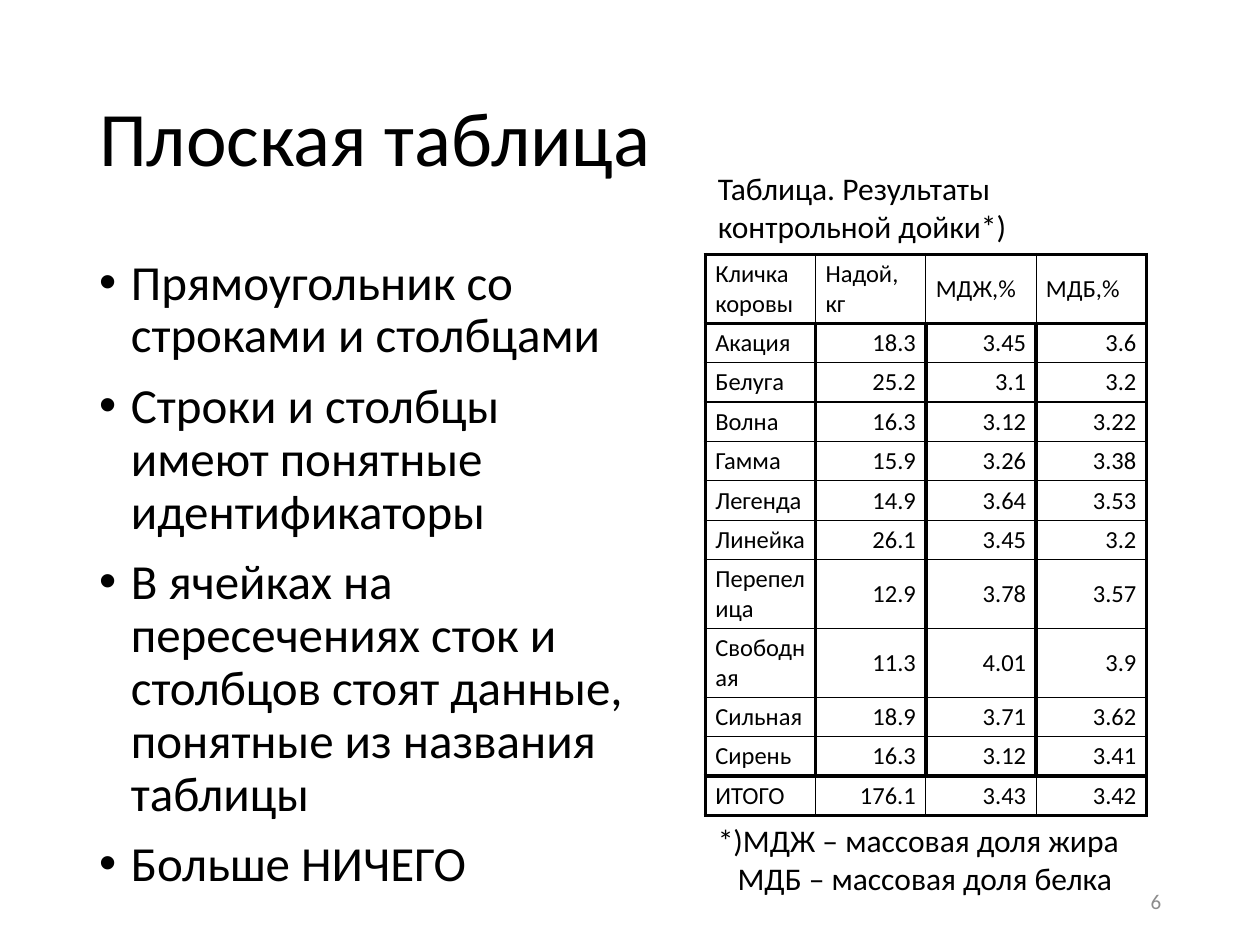
from lxml import etree
from pptx import Presentation
from pptx.dml.color import RGBColor
from pptx.enum.text import MSO_ANCHOR, PP_ALIGN
from pptx.oxml.ns import qn
from pptx.util import Cm, Pt

LEFT, RIGHT = PP_ALIGN.LEFT, PP_ALIGN.RIGHT
TOP, MIDDLE = MSO_ANCHOR.TOP, MSO_ANCHOR.MIDDLE
COLORS = {"text": "000000", "border": "000000", "number": "8C8C8C"}
FONT = "Calibri"
THIN, THICK = 0.75, 2.25

BULLETS = [
    "Прямоугольник со строками и столбцами",
    "Строки и столбцы имеют понятные идентификаторы",
    "В ячейках на пересечениях сток и столбцов стоят данные, понятные из названия таблицы",
    "Больше НИЧЕГО",
]
MILKING = [
    ("Кличка коровы", "Надой, кг", "МДЖ,%", "МДБ,%"),
    ("Акация", "18.3", "3.45", "3.6"),
    ("Белуга", "25.2", "3.1", "3.2"),
    ("Волна", "16.3", "3.12", "3.22"),
    ("Гамма", "15.9", "3.26", "3.38"),
    ("Легенда", "14.9", "3.64", "3.53"),
    ("Линейка", "26.1", "3.45", "3.2"),
    ("Перепелица", "12.9", "3.78", "3.57"),
    ("Свободная", "11.3", "4.01", "3.9"),
    ("Сильная", "18.9", "3.71", "3.62"),
    ("Сирень", "16.3", "3.12", "3.41"),
    ("ИТОГО", "176.1", "3.43", "3.42"),
]
TALL_ROWS = (0, 7, 8)


def set_attrs(obj, **values):
    """Set each named attribute on the object."""
    for name, value in values.items():
        setattr(obj, name, value)


def write(p, text, size, color="text", **fmt):
    """Fill a paragraph with text, font and paragraph format."""
    p.text = text
    set_attrs(p, **fmt)
    for r in p.runs:
        set_attrs(r.font, name=FONT, size=Pt(size))
        r.font.color.rgb = RGBColor.from_string(COLORS[color])


def indent(p, margin, bullet=None):
    """Give a paragraph a hanging indent and an optional bullet."""
    pPr = p._p.get_or_add_pPr()
    pPr.set("marL", str(Cm(margin)))
    pPr.set("indent", str(-Cm(margin)))
    if bullet:
        etree.SubElement(pPr, qn("a:buFont"), typeface="Arial")
        etree.SubElement(pPr, qn("a:buChar"), char=bullet)


def add_text(s, box, texts, size, color="text", anchor=TOP, **fmt):
    """Add a wrapped text box and return its paragraphs."""
    tf = s.shapes.add_textbox(*map(Cm, box)).text_frame
    set_attrs(tf, word_wrap=True, vertical_anchor=anchor)
    for i, text in enumerate(texts):
        p = tf.add_paragraph() if i else tf.paragraphs[0]
        write(p, text, size, color, **fmt)
    return tf.paragraphs


def add_bullets(s, box):
    """Add the list of table properties."""
    for p in add_text(s, box, BULLETS, 28, line_spacing=0.9, space_before=Pt(10)):
        indent(p, 0.64, "•")


def set_borders(cell, widths):
    """Draw the left, right, top and bottom borders of a cell."""
    tcPr = cell._tc.get_or_add_tcPr()
    for i, (side, width) in enumerate(zip("LRTB", widths)):
        ln = etree.Element(qn(f"a:ln{side}"), w=str(Pt(width)))
        fill = etree.SubElement(ln, qn("a:solidFill"))
        etree.SubElement(fill, qn("a:srgbClr"), val=COLORS["border"])
        tcPr.insert(i, ln)


def border_widths(row, col):
    """Return left, right, top and bottom widths for a cell."""
    last_row, last_col = len(MILKING) - 1, len(MILKING[0]) - 1
    body = 0 < row < last_row
    heavy = (body or col == 0, body or col == last_col,
             row in (0, 1, last_row), row in (0, last_row - 1, last_row))
    return [THICK if h else THIN for h in heavy]


def add_milking_table(s, box):
    """Add the milking results as a bordered table."""
    n_rows, n_cols = len(MILKING), len(MILKING[0])
    table = s.shapes.add_table(n_rows, n_cols, *map(Cm, box)).table
    set_attrs(table, first_row=False, horz_banding=False)
    for col in table.columns:
        col.width = Cm(box[2] / n_cols)
    for i, values in enumerate(MILKING):
        table.rows[i].height = Cm(1.02 if i in TALL_ROWS else 0.58)
        for j, value in enumerate(values):
            cell = table.cell(i, j)
            set_attrs(cell, vertical_anchor=MIDDLE,
                      margin_left=Cm(0.2), margin_right=Cm(0.2),
                      margin_top=Cm(0.1), margin_bottom=Cm(0.1))
            write(cell.text_frame.paragraphs[0], value, 14,
                  alignment=RIGHT if i and j else LEFT)
            cell.fill.background()
            set_borders(cell, border_widths(i, j))


def add_results(s, box):
    """Add the table with its caption above and footnote below."""
    x, y, w, h = box
    caption_h = 1.8
    add_text(s, (x, y, w + 0.33, caption_h),
             ["Таблица. Результаты контрольной дойки*)"], 18)
    add_milking_table(s, (x, y + 1.85, w, h - 1.85 - caption_h))
    note = "*)МДЖ – массовая доля жира\vМДБ – массовая доля белка"
    for p in add_text(s, (x, y + h - caption_h, w, caption_h), [note], 18):
        indent(p, 0.4)


def main():
    """Build the slide and save it."""
    prs = Presentation()
    prs.slide_width, prs.slide_height = Cm(25.4), Cm(19.05)
    s = prs.slides.add_slide(prs.slide_layouts[6])
    add_text(s, (1.75, 1.01, 21.9, 3.68), ["Плоская таблица"], 44,
             anchor=MIDDLE, line_spacing=0.9)
    add_bullets(s, (1.75, 5.07, 11.2, 13.35))
    add_text(s, (17.94, 17.66, 5.72, 1.01), ["6"], 12, "number",
             MIDDLE, alignment=RIGHT)
    add_results(s, (14.22, 3.28, 8.89, 14.95))
    prs.save("out.pptx")


if __name__ == "__main__":
    main()
